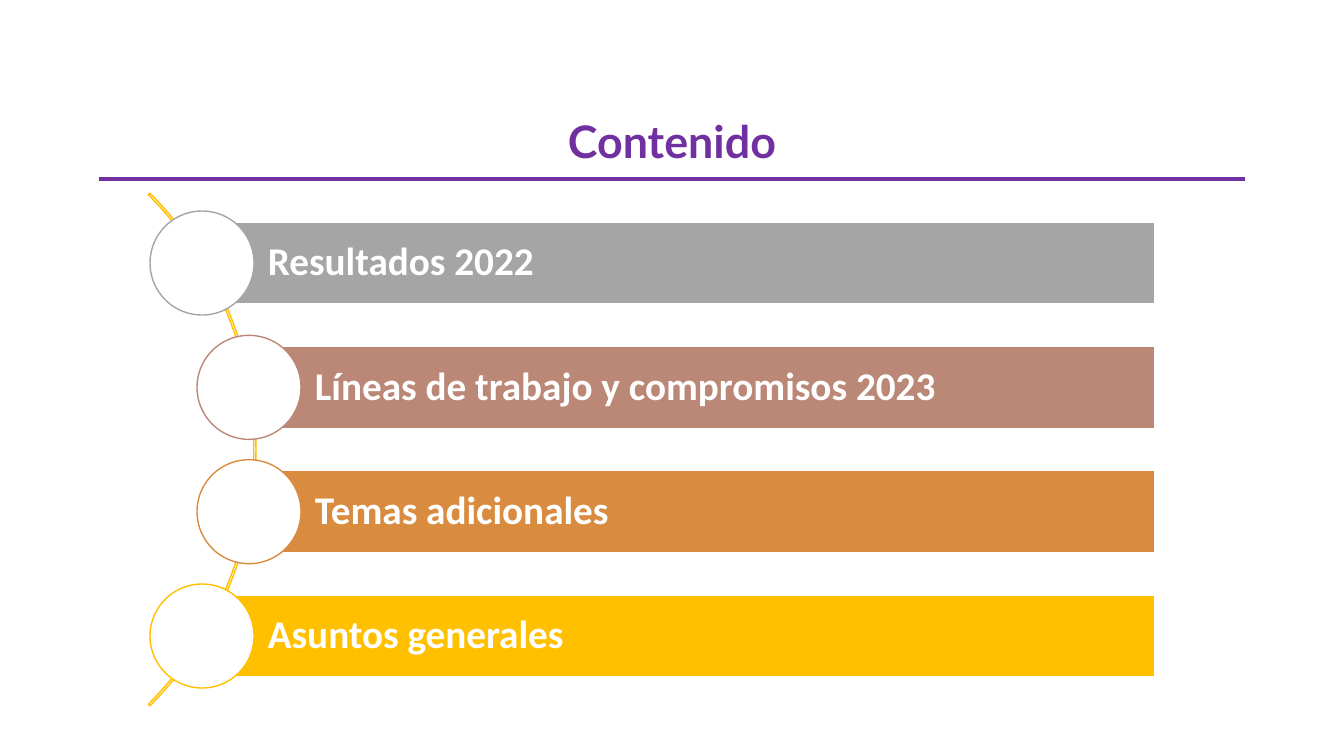
from pptx import Presentation
from pptx.dml.color import RGBColor
from pptx.enum.shapes import MSO_CONNECTOR as Connector, MSO_SHAPE as Shape
from pptx.enum.text import MSO_ANCHOR as Anchor, PP_ALIGN as Align
from pptx.oxml.ns import qn
from pptx.util import Pt
from lxml.etree import SubElement

WHITE = RGBColor(0xFF, 0xFF, 0xFF)
PURPLE = RGBColor(0x70, 0x30, 0xA0)
GRAY = RGBColor(0xA5, 0xA5, 0xA5)
ROSE = RGBColor(0xBB, 0x87, 0x76)
ORANGE = RGBColor(0xD9, 0x8C, 0x3F)
GOLD = RGBColor(0xFF, 0xC0, 0x00)

TOPICS = [
    ("Resultados 2022", GRAY, 0),
    ("Líneas de trabajo y compromisos 2023", ROSE, 47),
    ("Temas adicionales", ORANGE, 47),
    ("Asuntos generales", GOLD, 0),
]


def px(length):
    return round(length * 914400 / 100.8)


def add_outlined(page, kind, box, fill, line):
    shape = page.shapes.add_shape(kind, *map(px, box))
    shape.shadow.inherit = False
    if fill is None:
        shape.fill.background()
    else:
        shape.fill.solid()
        shape.fill.fore_color.rgb = fill
    shape.line.color.rgb = line
    shape.line.width = Pt(1)
    return shape


def write(frame, text, font, size, color, align):
    frame.word_wrap = True
    para = frame.paragraphs[0]
    para.text = text
    para.alignment = align
    para.line_spacing = 0.9
    span = para.runs[0]
    span.font.name = font
    span.font.size = Pt(size)
    span.font.bold = True
    span.font.color.rgb = color


def add_heading(page, left, top, width, height):
    rule_y = px(top + height)
    rule = page.shapes.add_connector(
        Connector.STRAIGHT, px(left), rule_y, px(left + width), rule_y)
    rule.line.color.rgb = PURPLE
    rule.line.width = Pt(2.25)
    SubElement(rule.element.spPr, qn("a:effectLst"))
    title = page.shapes.add_textbox(
        px(left + 138), px(top), px(width - 276), px(height - 5))
    write(title.text_frame, "Contenido", "Lato", 32, PURPLE, Align.CENTER)


def add_arc(page, left, top, size):
    arc = add_outlined(page, Shape.BLOCK_ARC, (left, top, size, size), None, GOLD)
    for index, value in enumerate((189, 27, 0.003)):
        arc.adjustments[index] = value


def add_topics(page, left, top, width, height):
    circle, bar_height = 104, 82
    pitch = (height - circle) / (len(TOPICS) - 1)
    for row, (text, color, indent) in enumerate(TOPICS):
        row_left, row_top = left + indent, top + row * pitch
        bar_left = row_left + circle / 2
        bar_box = (bar_left, row_top + (circle - bar_height) / 2,
                   left + width - bar_left, bar_height)
        bar = add_outlined(page, Shape.RECTANGLE, bar_box, color, WHITE)
        frame = bar.text_frame
        frame.margin_left = px(66)
        frame.margin_right = frame.margin_top = frame.margin_bottom = px(8)
        frame.vertical_anchor = Anchor.MIDDLE
        write(frame, text, "Calibri", 28, WHITE, Align.LEFT)
        add_outlined(page, Shape.OVAL, (row_left, row_top, circle, circle), WHITE, color)


def main():
    deck = Presentation()
    deck.slide_width, deck.slide_height = px(1344), px(756)
    page = deck.slides.add_slide(deck.slide_layouts[6])
    add_heading(page, 99, 115, 1146, 64)
    add_arc(page, -469, 87, 725)
    add_topics(page, 150, 211, 1005, 477)
    deck.save("out.pptx")


if __name__ == "__main__":
    main()
